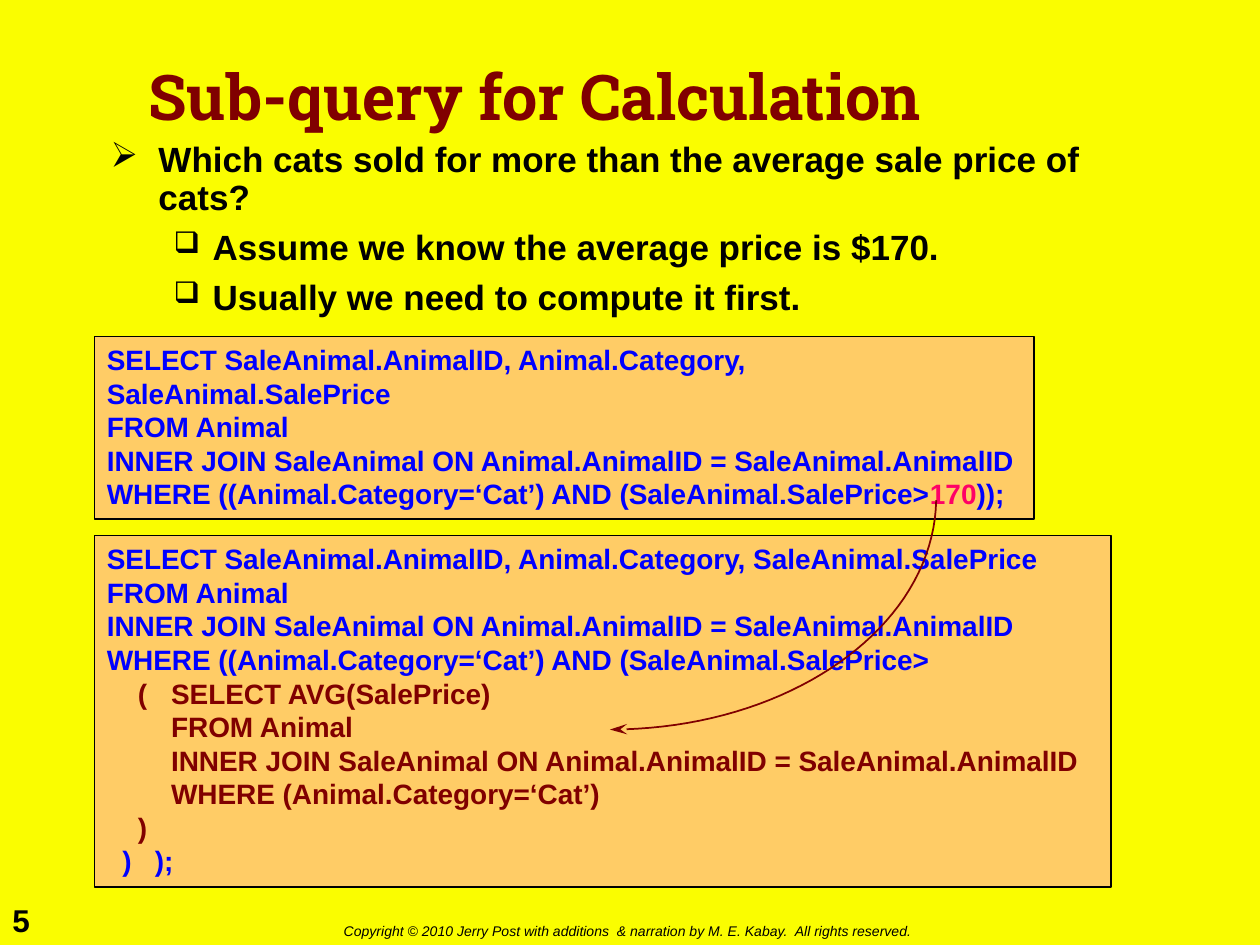
from lxml.etree import SubElement
from pptx import Presentation
from pptx.dml.color import RGBColor
from pptx.enum.shapes import MSO_SHAPE
from pptx.enum.text import MSO_ANCHOR, MSO_AUTO_SIZE, PP_ALIGN
from pptx.oxml.ns import qn
from pptx.util import Inches, Pt

COLORS = {"page": "FAFD00", "panel": "FFCC66", "text": "000000",
          "accent": "800000", "sql": "0000FF", "value": "FF0066"}

deck = Presentation()
deck.slide_width, deck.slide_height = Inches(10), Inches(7.5)
column, row = deck.slide_width / 100, deck.slide_height / 75


def cells(left, top, width, height):
    """Turn a place on the 100 by 75 grid into lengths."""
    return [round(left * column), round(top * row),
            round(width * column), round(height * row)]


def set_font(font, size, color, bold=True, name="Arial"):
    font.name, font.size, font.bold = name, Pt(size), bold
    font.color.rgb = RGBColor.from_string(COLORS[color])


page = deck.slides.add_slide(deck.slide_layouts[5])
page.background.fill.solid()
page.background.fill.fore_color.rgb = RGBColor.from_string(COLORS["page"])

# Title
title = page.shapes.title
title.left, title.top, title.width, title.height = cells(10.8, 1.7, 78.3, 12.5)
frame = title.text_frame
frame.text = "Sub-query for Calculation"
frame.auto_size = MSO_AUTO_SIZE.NONE
frame.vertical_anchor = MSO_ANCHOR.MIDDLE
heading = frame.paragraphs[0]
heading.alignment, heading.line_spacing = PP_ALIGN.LEFT, 0.9
set_font(heading.font, 36, "accent", name="Roboto Slab")

# Footer: slide number and copyright line
footers = [("5", (0, 71, 5, 4), 18, True),
           ("Copyright © 2010 Jerry Post with additions  & narration by "
            "M. E. Kabay.  All rights reserved.", (26.3, 72.7, 48.4, 2.4), 8, False)]
for text, place, size, bold in footers:
    frame = page.shapes.add_textbox(*cells(*place)).text_frame
    frame.text = text
    frame.word_wrap = False
    set_font(frame.paragraphs[0].font, size, "text", bold)
    frame.paragraphs[0].font.italic = not bold

# Question with its two sub-points: level, bullet, bullet size, left, hanging
styles = [("➢", 100, 0.38, 0.38), ("❑", 85, 0.81, 0.31)]
points = [(0, "Which cats sold for more than the average sale price of cats?"),
          (1, "Assume we know the average price is $170."),
          (1, "Usually we need to compute it first.")]
frame = page.shapes.add_textbox(*cells(7.8, 10.8, 84.4, 15)).text_frame
frame.word_wrap = True
for index, (level, text) in enumerate(points):
    para = frame.add_paragraph() if index else frame.paragraphs[0]
    para.text, para.level = text, level
    bullet, percent, left, hanging = styles[level]
    properties = para._p.get_or_add_pPr()
    properties.set("marL", str(Inches(left)))
    properties.set("indent", str(-Inches(hanging)))
    SubElement(properties, qn("a:buSzPct"), val=str(percent * 1000))
    SubElement(properties, qn("a:buChar"), char=bullet)
    para.line_spacing = 0.9
    if index:
        para.space_before = Pt(7)
    set_font(para.font, 20, "text")

# SQL panels: each line is a list of (text, colour) spans
select = "SELECT SaleAnimal.AnimalID, Animal.Category, SaleAnimal.SalePrice"
join = "INNER JOIN SaleAnimal ON Animal.AnimalID = SaleAnimal.AnimalID"
where = "WHERE ((Animal.Category=‘Cat’) AND (SaleAnimal.SalePrice>"
opening = [[(line, "sql")] for line in (select, "FROM Animal", join)]
subquery = ["    (\tSELECT AVG(SalePrice)", "\tFROM Animal", "\t" + join,
            "\tWHERE (Animal.Category=‘Cat’)", "    )"]
panels = [
    ((7.5, 26.7, 74.6, 14.5),
     opening + [[(where, "sql"), ("170", "value"), ("));", "sql")]]),
    ((7.5, 42.5, 80.7, 27.9),
     opening + [[(where, "sql")]] + [[(line, "accent")] for line in subquery]
     + [[("  )   );", "sql")]]),
]
for place, lines in panels:
    box = page.shapes.add_shape(MSO_SHAPE.RECTANGLE, *cells(*place))
    box.shadow.inherit = False
    box.fill.solid()
    box.fill.fore_color.rgb = RGBColor.from_string(COLORS["panel"])
    box.line.color.rgb = RGBColor.from_string(COLORS["text"])
    box.line.width = Pt(1)
    frame = box.text_frame
    frame.word_wrap, frame.vertical_anchor = True, MSO_ANCHOR.TOP
    for index, spans in enumerate(lines):
        para = frame.add_paragraph() if index else frame.paragraphs[0]
        para.alignment = PP_ALIGN.LEFT
        tabs = SubElement(para._p.get_or_add_pPr(), qn("a:tabLst"))
        SubElement(tabs, qn("a:tab"), pos=str(Inches(0.51)), algn="l")
        for text, color in spans:
            span = para.add_run()
            span.text = text
            set_font(span.font, 16, color)

# Curved arrow from the fixed price to the sub-query, along a Bezier curve
controls = [(74.3, 39.7), (74.1, 49.8), (62.6, 57.9), (48.4, 57.9)]
steps = 40
curve = []
for step in range(steps + 1):
    t = step / steps
    weights = [(1 - t) ** 3, 3 * t * (1 - t) ** 2, 3 * t ** 2 * (1 - t), t ** 3]
    x, y = (sum(w * c[axis] for w, c in zip(weights, controls)) for axis in (0, 1))
    curve.append((round(x * column), round(y * row)))
builder = page.shapes.build_freeform(*curve[0])
builder.add_line_segments(curve[1:], close=False)
arrow = builder.convert_to_shape()
arrow.shadow.inherit = False
arrow.fill.background()
arrow.line.color.rgb = RGBColor.from_string(COLORS["accent"])
arrow.line.width = Pt(1)
SubElement(arrow.line._get_or_add_ln(), qn("a:tailEnd"), type="stealth", w="med", len="lg")

deck.save("out.pptx")
